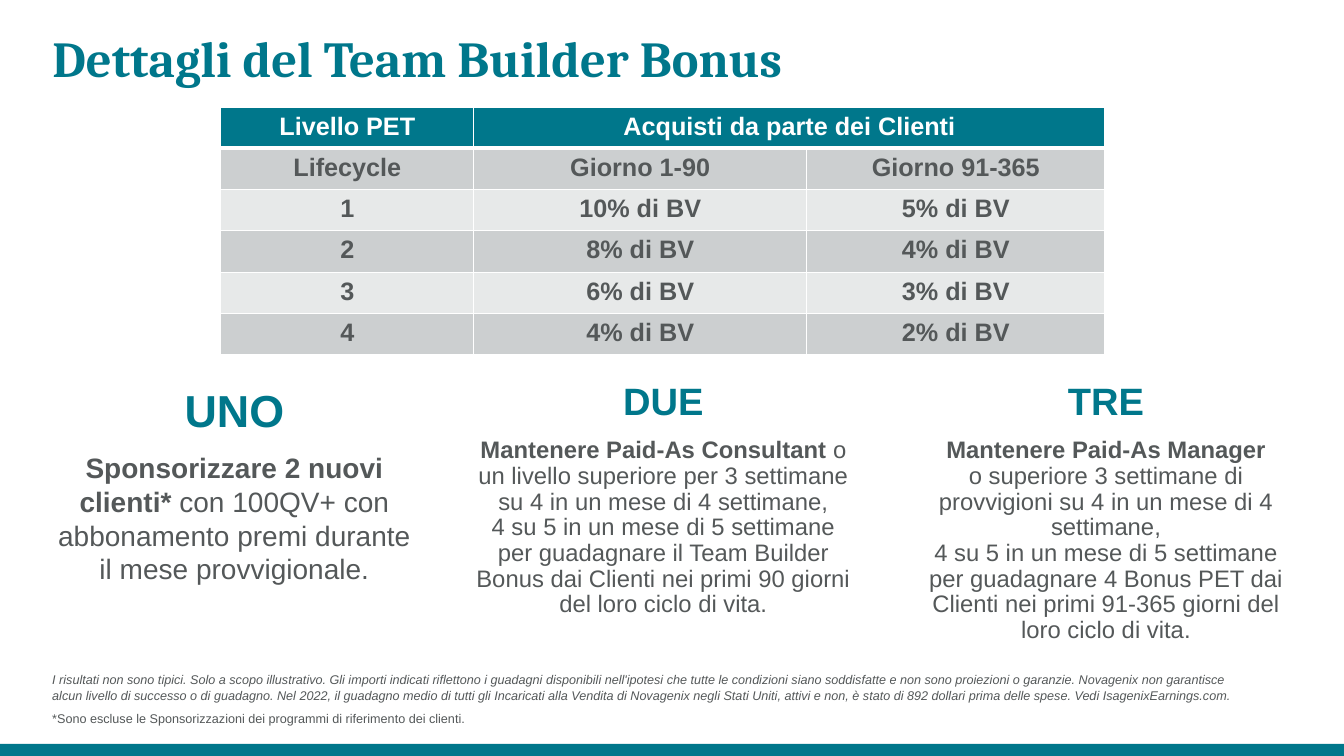
from lxml.etree import SubElement
from pptx import Presentation
from pptx.dml.color import RGBColor
from pptx.enum.shapes import MSO_SHAPE as Preset
from pptx.enum.text import MSO_ANCHOR as Anchor, MSO_AUTO_SIZE as AutoSize, PP_ALIGN as Align
from pptx.oxml.ns import qn
from pptx.util import Inches, Pt

COLORS = {"teal": "00778B", "text": "545859", "white": "FFFFFF", "dark": "CCCFD0", "light": "E7E9E9"}

TABLE_ROWS = [
    ["Livello PET", "Acquisti da parte dei Clienti", ""],
    ["Lifecycle", "Giorno 1-90", "Giorno 91-365"],
    ["1", "10% di BV", "5% di BV"],
    ["2", "8% di BV", "4% di BV"],
    ["3", "6% di BV", "3% di BV"],
    ["4", "4% di BV", "2% di BV"],
]
COLUMN_WIDTHS = [2.51, 3.3, 2.96]

STEP_ONE = ("UNO", "Sponsorizzare 2 nuovi clienti* ",
            "con 100QV+ con abbonamento premi durante il mese provvigionale.")
STEP_TWO = ("DUE", "Mantenere Paid-As Consultant ",
            "o un livello superiore per 3 settimane su 4 in un mese di 4 settimane,\n"
            "4 su 5 in un mese di 5 settimane per guadagnare il Team Builder Bonus "
            "dai Clienti nei primi 90 giorni del loro ciclo di vita.")
STEP_THREE = ("TRE", "Mantenere Paid-As Manager\n",
              "o superiore 3 settimane di provvigioni su 4 in un mese di 4 settimane,\n"
              "4 su 5 in un mese di 5 settimane per guadagnare 4 Bonus PET dai Clienti "
              "nei primi 91-365 giorni del loro ciclo di vita.")

DISCLAIMER = (
    "I risultati non sono tipici. Solo a scopo illustrativo. Gli importi indicati riflettono i "
    "guadagni disponibili nell'ipotesi che tutte le condizioni siano soddisfatte e non sono "
    "proiezioni o garanzie. Novagenix non garantisce alcun livello di successo o di guadagno. "
    "Nel 2022, il guadagno medio di tutti gli Incaricati alla Vendita di Novagenix negli Stati "
    "Uniti, attivi e non, è stato di 892 dollari prima delle spese. Vedi IsagenixEarnings.com.")
FOOTNOTE = "*Sono escluse le Sponsorizzazioni dei programmi di riferimento dei clienti."


def color(name):
    """Return the named colour."""
    return RGBColor.from_string(COLORS[name])


def set_values(target, values):
    """Set each attribute of the target from a dict."""
    for name, value in values.items():
        setattr(target, name, value)


def place(shape, left, top, width, height):
    """Move and size a shape, in inches."""
    set_values(shape, {"left": Inches(left), "top": Inches(top),
                       "width": Inches(width), "height": Inches(height)})


def add_text(paragraph, text, size, color_name, font="Arial", **style):
    """Add formatted runs, with a line break at each newline."""
    for index, line in enumerate(text.split("\n")):
        if index:
            paragraph.add_line_break()
        if line:
            run = paragraph.add_run()
            run.text = line
            set_values(run.font, {"name": font, "size": Pt(size), **style})
            run.font.color.rgb = color(color_name)


def add_title(slide, text):
    """Format the title placeholder."""
    title = slide.shapes.title
    place(title, 0.42, 0.15, 11.8, 0.92)
    set_values(title.text_frame, {"auto_size": AutoSize.NONE, "vertical_anchor": Anchor.MIDDLE})
    paragraph = title.text_frame.paragraphs[0]
    set_values(paragraph, {"alignment": Align.LEFT, "line_spacing": 0.9})
    add_text(paragraph, text, 36, "teal", "Cambria", bold=True)


def fill_step(shape, step, heading_size, body_size, line_spacing):
    """Write a centred heading and its explanation."""
    heading, lead, detail = step
    frame = shape.text_frame
    set_values(frame, {"word_wrap": True, "auto_size": AutoSize.NONE, "vertical_anchor": Anchor.TOP})
    paragraphs = [frame.paragraphs[0], frame.add_paragraph()]
    for paragraph, space in zip(paragraphs, (0, 10)):
        properties = paragraph._p.get_or_add_pPr()
        properties.set("marL", "0")
        properties.set("indent", "0")
        SubElement(properties, qn("a:buNone"))
        set_values(paragraph, {"alignment": Align.CENTER, "line_spacing": line_spacing,
                               "space_before": Pt(space)})
    add_text(paragraphs[0], heading, heading_size, "teal", bold=True)
    add_text(paragraphs[1], lead, body_size, "text", bold=True)
    add_text(paragraphs[1], detail, body_size, "text", bold=False)


def add_notice(slide):
    """Add the small print."""
    frame = slide.shapes.add_textbox(Inches(0.42), Inches(6.62), Inches(12), Inches(0.64)).text_frame
    frame.word_wrap = True
    lines = [(frame.paragraphs[0], DISCLAIMER, True), (frame.add_paragraph(), FOOTNOTE, False)]
    for paragraph, text, italic in lines:
        paragraph.space_after = Pt(6)
        add_text(paragraph, text, 9, "text", italic=italic)


def set_borders(cell, bottom_width):
    """Give a cell white borders."""
    properties = cell._tc.get_or_add_tcPr()
    for side, width in (("L", 1), ("R", 1), ("T", 1), ("B", bottom_width)):
        line = SubElement(properties, qn(f"a:ln{side}"), w=str(Pt(width)))
        fill = SubElement(line, qn("a:solidFill"))
        SubElement(fill, qn("a:srgbClr"), val=COLORS["white"])


def add_bonus_table(slide):
    """Add the table of bonus rates."""
    table = slide.shapes.add_table(len(TABLE_ROWS), len(COLUMN_WIDTHS), Inches(2.19), Inches(1.07),
                                   Inches(8.78), Inches(2.43)).table
    for column, width in zip(table.columns, COLUMN_WIDTHS):
        column.width = Inches(width)
    for row_index, texts in enumerate(TABLE_ROWS):
        is_header = row_index == 0
        table.rows[row_index].height = Inches(0.31 if is_header else 0.41)
        fill_name = "teal" if is_header else ("light", "dark")[row_index % 2]
        for column_index, text in enumerate(texts):
            cell = table.cell(row_index, column_index)
            set_borders(cell, 3 if is_header else 1)
            cell.fill.solid()
            cell.fill.fore_color.rgb = color(fill_name)
            paragraph = cell.text_frame.paragraphs[0]
            paragraph.alignment = Align.CENTER
            add_text(paragraph, text, 18, "white" if is_header else "text", bold=True)
    table.cell(0, 1).merge(table.cell(0, 2))


def add_bottom_bar(slide):
    """Add the teal band along the bottom edge."""
    bar = slide.shapes.add_shape(Preset.RECTANGLE, 0, Inches(7.38), Inches(13.33), Inches(0.12))
    bar.shadow.inherit = False
    bar.fill.solid()
    bar.fill.fore_color.rgb = color("teal")
    bar.line.fill.background()


def main():
    """Build and save the slide."""
    presentation = Presentation()
    set_values(presentation, {"slide_width": Inches(13.33), "slide_height": Inches(7.5)})
    slide = presentation.slides.add_slide(presentation.slide_layouts[1])
    add_bottom_bar(slide)
    add_title(slide, "Dettagli del Team Builder Bonus")
    body = slide.placeholders[1]
    place(body, 0.42, 3.75, 3.81, 2.71)
    fill_step(body, STEP_ONE, 32, 20, 1.0)
    add_notice(slide)
    for left, step in ((4.6, STEP_TWO), (8.99, STEP_THREE)):
        box = slide.shapes.add_textbox(Inches(left), Inches(3.75), Inches(3.96), Inches(2.71))
        fill_step(box, step, 27.2, 17, 0.9)
    add_bonus_table(slide)
    presentation.save("out.pptx")


if __name__ == "__main__":
    main()
